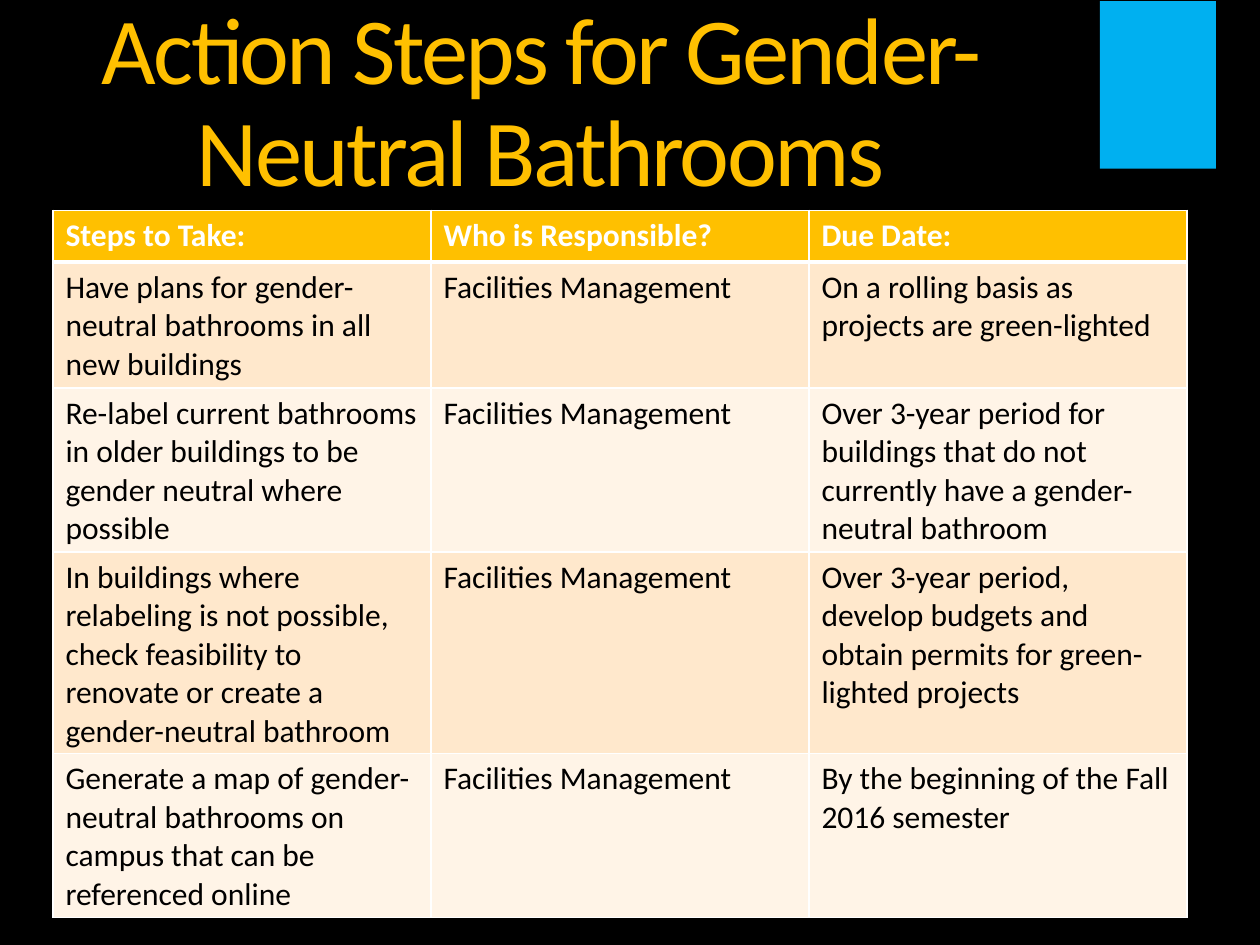
import dataclasses

import lxml.etree
import pptx
import pptx.dml.color
import pptx.enum.shapes
import pptx.enum.text
import pptx.oxml.ns
import pptx.util

Inches = pptx.util.Inches
Pt = pptx.util.Pt
qn = pptx.oxml.ns.qn

FONT = "Calibri"
HUES = {
    "back": "000000",
    "gold": "FFC000",
    "blue": "00B0F0",
    "dark": "FFE8CC",
    "light": "FFF4E7",
    "ink": "000000",
    "white": "FFFFFF",
}


@dataclasses.dataclass
class Step:
    task: str
    owner: str
    due: str


HEAD = Step("Steps to Take:", "Who is Responsible?", "Due Date:")
TEAM = "Facilities Management"
STEPS = [
    Step("Have plans for gender- neutral bathrooms in all new buildings", TEAM,
         "On a rolling basis as projects are green-lighted"),
    Step("Re-label current bathrooms in older buildings to be gender neutral where possible", TEAM,
         "Over 3-year period for buildings that do not currently have a gender-neutral bathroom"),
    Step("In buildings where relabeling is not possible, check feasibility to renovate "
         "or create a gender-neutral bathroom", TEAM,
         "Over 3-year period, develop budgets and obtain permits for green- lighted projects"),
    Step("Generate a map of gender- neutral bathrooms on campus that can be referenced online", TEAM,
         "By the beginning of the Fall 2016 semester"),
]


def color(name: str) -> pptx.dml.color.RGBColor:
    return pptx.dml.color.RGBColor.from_string(HUES[name])


def paint(fill, name: str) -> None:
    fill.solid()
    fill.fore_color.rgb = color(name)


def style(font, size: float, name: str, bold: bool = False) -> None:
    font.name = FONT
    font.size = Pt(size)
    font.bold = bold
    font.color.rgb = color(name)


def edge(cell, base: float) -> None:
    props = cell._tc.get_or_add_tcPr()
    sides = {"lnL": 1, "lnR": 1, "lnT": 1, "lnB": base}
    for spot, (side, width) in enumerate(sides.items()):
        line = lxml.etree.Element(qn(f"a:{side}"), w=str(Pt(width)))
        fill = lxml.etree.SubElement(line, qn("a:solidFill"))
        lxml.etree.SubElement(fill, qn("a:srgbClr"), val=HUES["white"])
        props.insert(spot, line)


def title(slide) -> None:
    box = slide.shapes.add_textbox(Inches(0), Inches(0.16), Inches(8.58), Inches(1.34))
    frame = box.text_frame
    frame.word_wrap = True
    frame.vertical_anchor = pptx.enum.text.MSO_ANCHOR.MIDDLE
    frame.margin_left = frame.margin_right = frame.margin_top = frame.margin_bottom = 0
    frame.text = "Action Steps for Gender- Neutral Bathrooms"
    para = frame.paragraphs[0]
    para.alignment = pptx.enum.text.PP_ALIGN.CENTER
    para.line_spacing = 0.9
    run = para.runs[0]
    style(run.font, 54, "gold")
    run.font._element.set("spc", "-150")


def table(slide) -> None:
    rows = [HEAD, *STEPS]
    high = Inches(0.41)
    grid = slide.shapes.add_table(
        len(rows), 3, Inches(0.42), Inches(1.67), Inches(9), high * len(rows)
    ).table
    for row, step in enumerate(rows):
        grid.rows[row].height = high
        top = row == 0
        shade = "gold" if top else "dark" if row % 2 else "light"
        for col, text in enumerate(dataclasses.astuple(step)):
            cell = grid.cell(row, col)
            cell.text_frame.text = text
            run = cell.text_frame.paragraphs[0].runs[0]
            style(run.font, 18, "white" if top else "ink", top)
            paint(cell.fill, shade)
            edge(cell, 3 if top else 1)


def block(slide) -> None:
    shape = slide.shapes.add_shape(
        pptx.enum.shapes.MSO_SHAPE.RECTANGLE,
        Inches(8.73), Inches(0.01), Inches(0.92), Inches(1.33),
    )
    shape.shadow.inherit = False
    paint(shape.fill, "blue")
    shape.line.fill.background()


def main() -> None:
    deck = pptx.Presentation()
    deck.slide_width = Inches(10)
    deck.slide_height = Inches(7.5)
    slide = deck.slides.add_slide(deck.slide_layouts[6])
    paint(slide.background.fill, "back")
    title(slide)
    table(slide)
    block(slide)
    deck.save("out.pptx")


if __name__ == "__main__":
    main()
